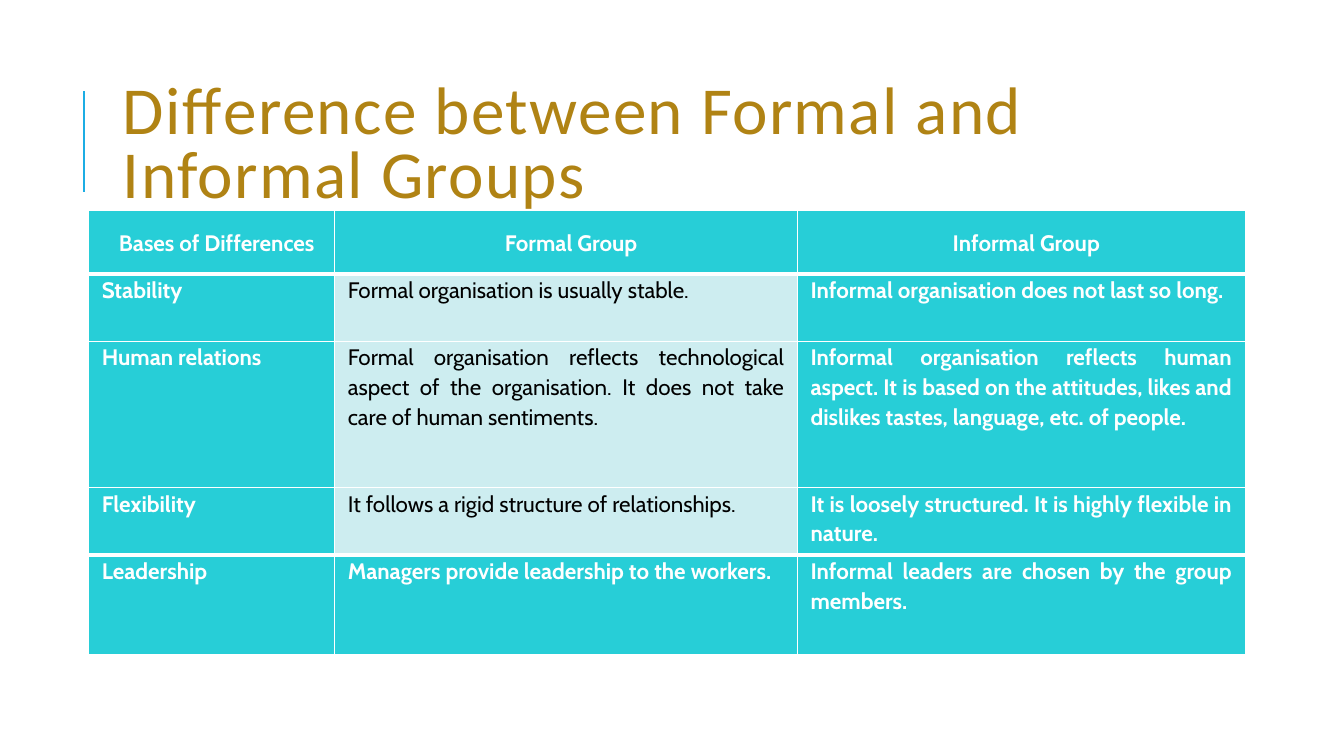
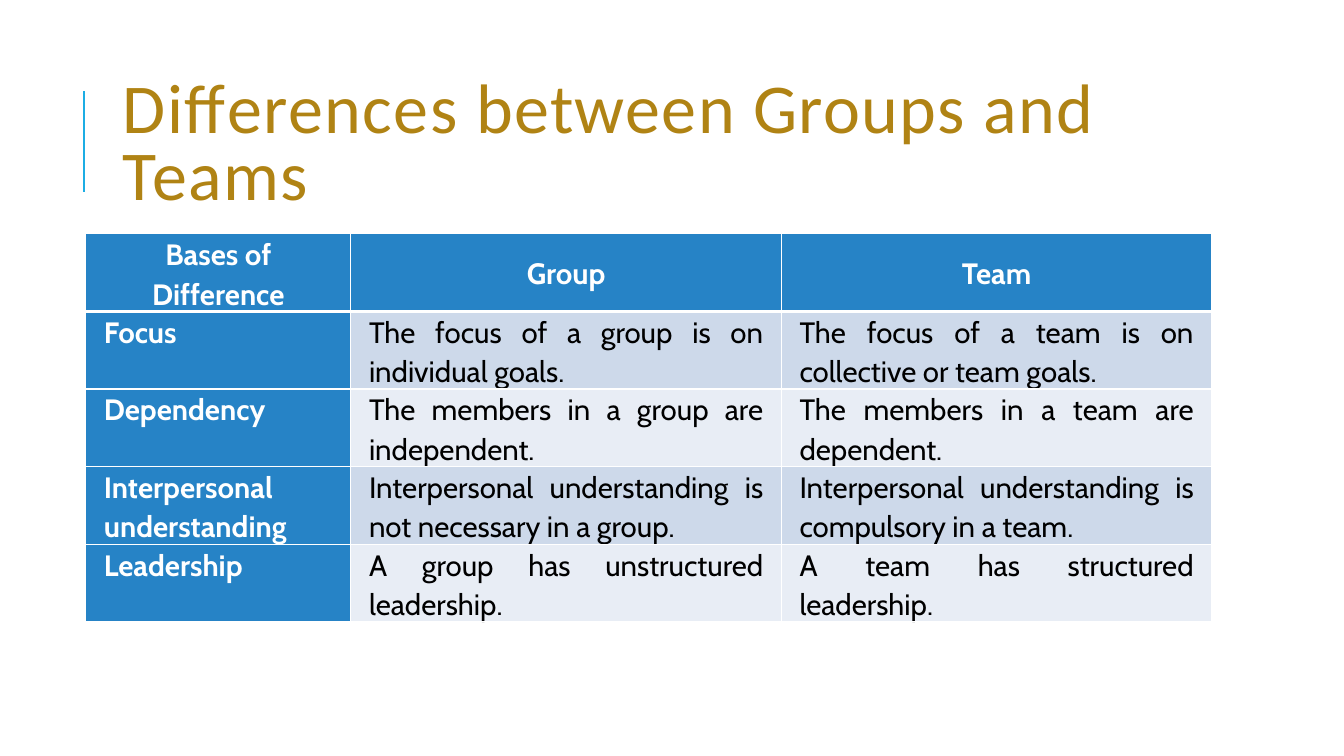
import pptx
import pptx.util
import pptx.dml.color
import pptx.enum.text
from lxml import etree

Inches, Pt = pptx.util.Inches, pptx.util.Pt
ALIGN = pptx.enum.text.PP_ALIGN
ANCHOR = pptx.enum.text.MSO_ANCHOR

WHITE, BLACK = "FFFFFF", "000000"
GOLD, ACCENT = "B08314", "1CADE4"
TEAL, PALE_TEAL = "27CED7", "CDEDF0"
BLUE, PALE_BLUE, PALEST_BLUE = "2683C6", "CDD9EA", "E8EDF5"


def paint(target, colour):
    """Give a solid fill, or the colour of a font or line."""
    if hasattr(target, "solid"):
        target.solid()
        target = target.fore_color
    else:
        target = target.color
    target.rgb = pptx.dml.color.RGBColor.from_string(colour)


def add_border(cell, side, points):
    border = etree.SubElement(cell._tc.get_or_add_tcPr(), pptx.oxml.ns.qn("a:ln" + side), w=str(Pt(points)))
    fill = etree.SubElement(border, pptx.oxml.ns.qn("a:solidFill"))
    etree.SubElement(fill, pptx.oxml.ns.qn("a:srgbClr"), val=WHITE)


# Content: "fills" holds the three cell colours of each row;
# "thick" holds the rows that have a heavy rule above them
comparisons = [
    {
        "title": "Difference between Formal and Informal Groups",
        "title_size": 48,
        "left": 0.88, "top": 2.09,
        "columns": [2.44, 4.59, 4.44],
        "heights": [0.63, 0.67, 1.45, 0.67, 0.98],
        "size": 16, "margin": 0.13, "header_indent": 0.1, "space_after": [1, 0],
        "thick": [1, 4],
        "fills": [[TEAL] * 3] + [[TEAL, PALE_TEAL, TEAL]] * 3 + [[TEAL] * 3],
        "rows": [
            ["Bases of Differences", "Formal Group", "Informal Group"],
            ["Stability", "Formal organisation is usually stable.",
             "Informal organisation does not last so long."],
            ["Human relations",
             "Formal organisation reflects technological aspect of the organisation. "
             "It does not take care of human sentiments.",
             "Informal organisation reflects human aspect. It is based on the attitudes, "
             "likes and dislikes tastes, language, etc. of people."],
            ["Flexibility", "It follows a rigid structure of relationships.",
             "It is loosely structured. It is highly flexible in nature."],
            ["Leadership", "Managers provide leadership to the workers.",
             "Informal leaders are chosen by the group members."],
        ],
    },
    {
        "title": "Differences between Groups and Teams",
        "title_size": 50,
        "left": 0.85, "top": 2.32,
        "columns": [2.63, 4.27, 4.27],
        "heights": [0.76] * 5,
        "size": 21, "margin": 0.18, "header_indent": 0, "space_after": [2, 2],
        "thick": [1],
        "fills": [[BLUE] * 3] + [[BLUE, PALE_BLUE, PALE_BLUE],
                                 [BLUE, PALEST_BLUE, PALEST_BLUE]] * 2,
        "rows": [
            ["Bases of Difference", "Group", "Team"],
            ["Focus", "The focus of a group is on individual goals.",
             "The focus of a team is on collective or team goals."],
            ["Dependency", "The members in a group are independent.",
             "The members in a team are dependent."],
            ["Interpersonal understanding",
             "Interpersonal understanding is not necessary in a group.",
             "Interpersonal understanding is compulsory in a team."],
            ["Leadership", "A group has unstructured leadership.",
             "A team has structured leadership."],
        ],
    },
]

deck = pptx.Presentation()
deck.slide_width, deck.slide_height = Inches(13.33), Inches(7.5)

for comparison in comparisons:
    slide = deck.slides.add_slide(deck.slide_layouts[6])

    # Accent line beside the title
    accent = slide.shapes.add_connector(
        pptx.enum.shapes.MSO_CONNECTOR.STRAIGHT,
        Inches(0.83), Inches(1.9), Inches(0.83), Inches(0.9))
    paint(accent.line, ACCENT)
    accent.line.width = Pt(1.5)
    etree.SubElement(accent._element.spPr, pptx.oxml.ns.qn("a:effectLst"))

    # Title
    title = slide.shapes.add_textbox(
        Inches(1.12), Inches(0.64), Inches(10.63), Inches(1.64)).text_frame
    title.word_wrap = True
    title.vertical_anchor = ANCHOR.MIDDLE
    title.paragraphs[0].line_spacing = 0.8
    heading = title.paragraphs[0].add_run()
    heading.text = comparison["title"]
    heading.font.name = "Calibri"
    heading.font.size = Pt(comparison["title_size"])
    paint(heading.font, GOLD)
    heading.font._element.set("spc", "100")

    # Comparison table
    rows, columns, heights = comparison["rows"], comparison["columns"], comparison["heights"]
    table = slide.shapes.add_table(
        len(rows), len(columns), Inches(comparison["left"]), Inches(comparison["top"]),
        Inches(sum(columns)), Inches(sum(heights))).table
    table.horz_banding = False
    for column, width in zip(table.columns, columns):
        column.width = Inches(width)

    for r, texts in enumerate(rows):
        table.rows[r].height = Inches(heights[r])
        is_header = r == 0
        for c, text in enumerate(texts):
            cell = table.cell(r, c)
            fill = comparison["fills"][r][c]
            is_strong = fill in (TEAL, BLUE)

            # Borders come before the fill in the cell's properties
            add_border(cell, "L", 1)
            add_border(cell, "R", 1)
            add_border(cell, "T", 3 if r in comparison["thick"] else 1)
            add_border(cell, "B", 3 if r + 1 in comparison["thick"] else 1)
            paint(cell.fill, fill)

            indent = comparison["header_indent"] if is_header else 0
            cell.margin_left = Inches(comparison["margin"] + indent)
            cell.margin_right = Inches(comparison["margin"])
            cell.margin_top = cell.margin_bottom = 0
            cell.vertical_anchor = ANCHOR.MIDDLE if is_header else ANCHOR.TOP

            paragraph = cell.text_frame.paragraphs[0]
            if is_header:
                paragraph.alignment = ALIGN.CENTER
            else:
                paragraph.alignment = ALIGN.LEFT if c == 0 else ALIGN.JUSTIFY
            paragraph.line_spacing = 1.1
            paragraph.space_after = Pt(comparison["space_after"][0 if is_header else 1])
            run = paragraph.add_run()
            run.text = text
            run.font.name = "Cabin"
            run.font.size = Pt(comparison["size"])
            run.font.bold = is_strong
            paint(run.font, WHITE if is_strong else BLACK)

deck.save("out.pptx")
